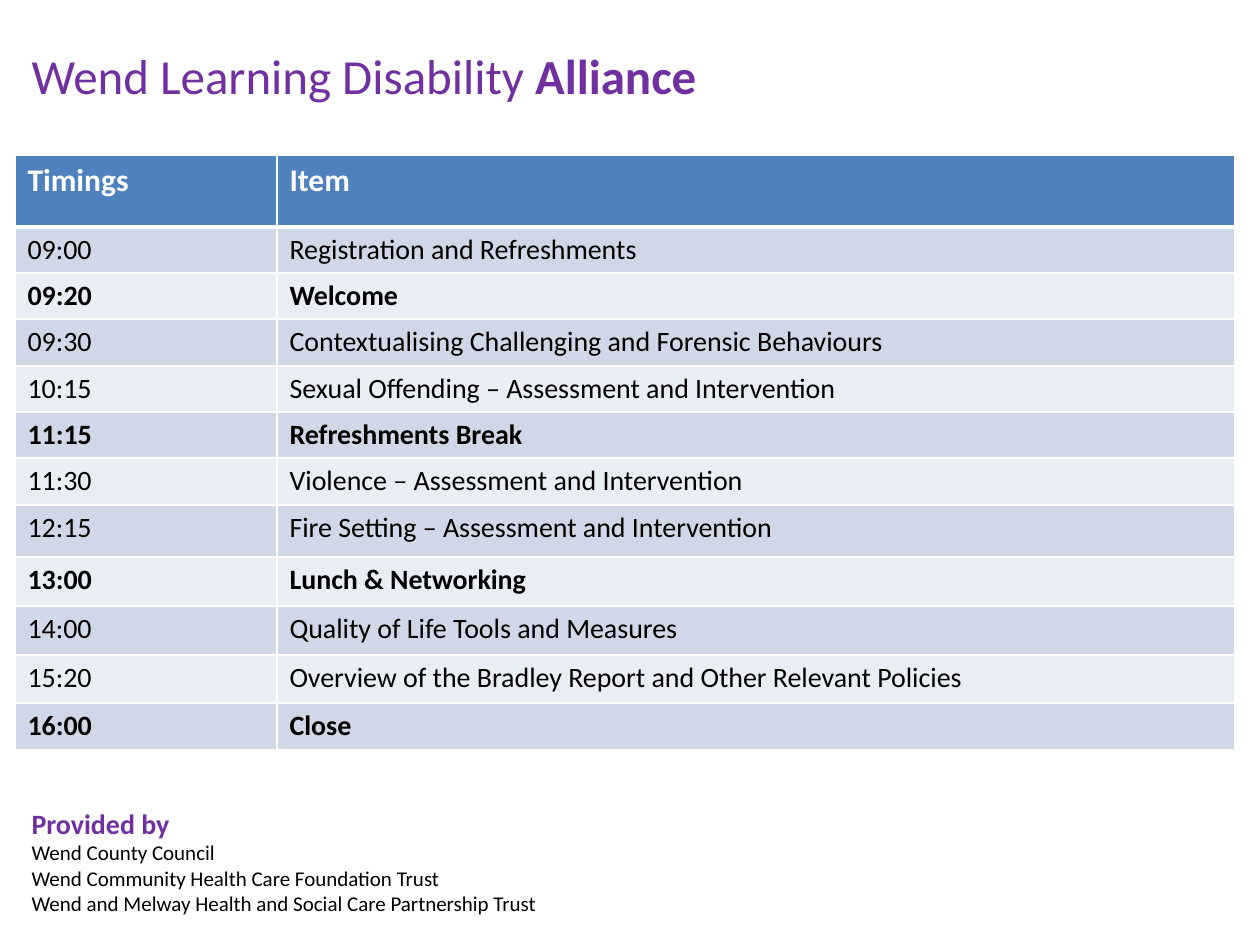
from lxml import etree
from pptx import Presentation
from pptx.dml.color import RGBColor
from pptx.enum import text
from pptx.oxml import ns
from pptx.util import Emu, Pt

SCALE = 914400 / 126  # EMU per px
COLORS = {
    "purple": "7030A0", "black": "000000", "white": "FFFFFF",
    "header": "4F81BD", "odd": "D0D8E8", "even": "E9EDF4",
}
FONT = "Calibri"
COLUMN_WIDTHS = [262, 958]
ROW_HEIGHTS = [72] + [46, 46, 47] * 2 + [52, 49, 49, 48, 47]
# Time, item, bold
AGENDA = [
    ("09:00", "Registration and Refreshments", False),
    ("09:20", "Welcome", True),
    ("09:30", "Contextualising Challenging and Forensic Behaviours", False),
    ("10:15", "Sexual Offending – Assessment and Intervention", False),
    ("11:15", "Refreshments Break", True),
    ("11:30", "Violence – Assessment and Intervention", False),
    ("12:15", "Fire Setting – Assessment and Intervention", False),
    ("13:00", "Lunch & Networking", True),
    ("14:00", "Quality of Life Tools and Measures", False),
    ("15:20", "Overview of the Bradley Report and Other Relevant Policies", False),
    ("16:00", "Close", True),
]
PROVIDERS = [
    "Wend County Council",
    "Wend Community Health Care Foundation Trust",
    "Wend and Melway Health and Social Care Partnership Trust",
]


def px(length):
    return Emu(round(length * SCALE))


def color(name):
    return RGBColor.from_string(COLORS[name])


def add_run(paragraph, words, size, color_name, bold=False):
    run = paragraph.add_run()
    run.text = words
    for name, value in {"name": FONT, "size": Pt(size), "bold": bold}.items():
        setattr(run.font, name, value)
    run.font.color.rgb = color(color_name)


def place_text(shape, box):
    for name, value in zip(("left", "top", "width", "height"), box):
        setattr(shape, name, px(value))
    settings = {
        "word_wrap": True,
        "auto_size": text.MSO_AUTO_SIZE.NONE,
        "vertical_anchor": text.MSO_ANCHOR.TOP,
    }
    for name, value in settings.items():
        setattr(shape.text_frame, name, value)
    return shape.text_frame


def add_title(shape, box):
    paragraph = place_text(shape, box).paragraphs[0]
    paragraph.alignment = text.PP_ALIGN.LEFT
    add_run(paragraph, "Wend Learning Disability ", 28, "purple")
    add_run(paragraph, "Alliance", 28, "purple", True)


def add_providers(shape, box):
    frame = place_text(shape, box)
    lines = [("Provided by", 16, "purple", True)]
    lines += [(name, 12, "black", False) for name in PROVIDERS]
    for index, line in enumerate(lines):
        paragraph = frame.add_paragraph() if index else frame.paragraphs[0]
        paragraph.space_before = Pt(0)
        add_run(paragraph, *line)
        # No bullet or hanging indent
        properties = paragraph._p.get_or_add_pPr()
        properties.set("marL", "0")
        properties.set("indent", "0")
        etree.SubElement(properties, ns.qn("a:buNone"))


def add_borders(cell, widths):
    properties = cell._tc.get_or_add_tcPr()
    for index, (side, width) in enumerate(widths.items()):
        line = etree.Element(ns.qn(f"a:ln{side}"), w=str(Pt(width)))
        fill = etree.SubElement(line, ns.qn("a:solidFill"))
        etree.SubElement(fill, ns.qn("a:srgbClr"), val=COLORS["white"])
        properties.insert(index, line)


def add_agenda(slide, box):
    rows = [("Timings", "Item", True)] + AGENDA
    frame = slide.shapes.add_table(len(rows), len(COLUMN_WIDTHS), *map(px, box))
    table = frame.table
    for column, width in zip(table.columns, COLUMN_WIDTHS):
        column.width = px(width)
    for row, height in zip(table.rows, ROW_HEIGHTS):
        row.height = px(height)

    for row_index, (*words, bold) in enumerate(rows):
        if row_index == 0:
            fill, font_color, size = "header", "white", 18
        else:
            fill, font_color, size = ("even", "odd")[row_index % 2], "black", 16
        top = 3 if row_index == 1 else 1
        bottom = 3 if row_index == 0 else 1
        for column_index, word in enumerate(words):
            cell = table.cell(row_index, column_index)
            cell.margin_bottom = px(4)
            cell.fill.solid()
            cell.fill.fore_color.rgb = color(fill)
            add_run(cell.text_frame.paragraphs[0], word, size, font_color, bold)
            add_borders(cell, {"L": 1, "R": 1, "T": top, "B": bottom})


def main():
    presentation = Presentation()
    presentation.slide_width, presentation.slide_height = px(1260), px(945)
    slide = presentation.slides.add_slide(presentation.slide_layouts[1])
    title, body = slide.placeholders

    add_title(title, (19, 39, 720, 72))
    add_providers(body, (19, 800, 1150, 127))
    add_agenda(slide, (15, 155, sum(COLUMN_WIDTHS), sum(ROW_HEIGHTS)))
    presentation.save("out.pptx")


if __name__ == "__main__":
    main()
